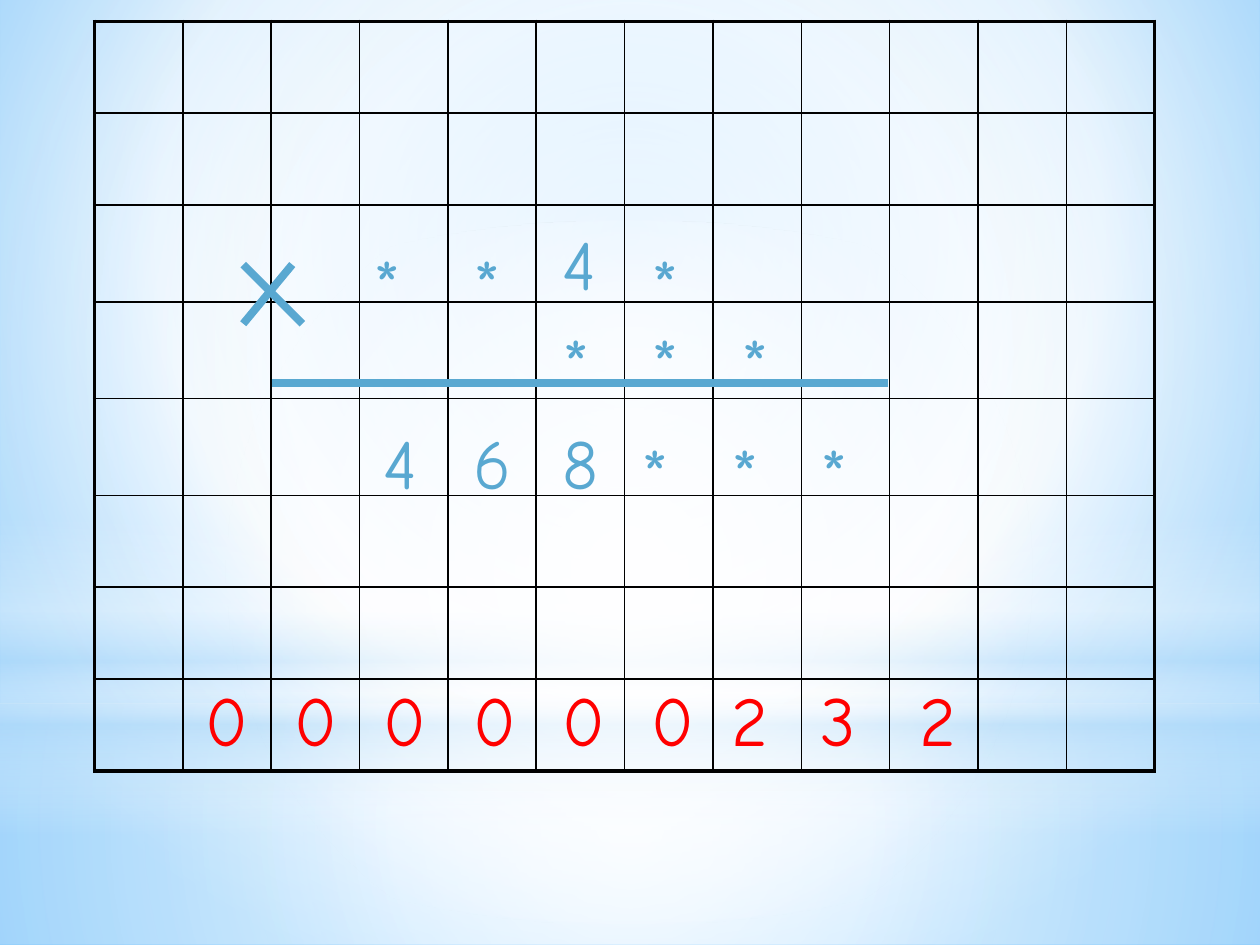
from lxml import etree
from pptx import Presentation
from pptx.dml.color import RGBColor
from pptx.enum import shapes, text
from pptx.oxml import ns, parse_xml
from pptx.util import Pt

COLOURS = {
    "digit": "59A8D1", "answer": "FF0000", "grid": "000000",
    "white": "FFFFFF", "haze": "B4DCFA", "sky": "9ED5FF", "edge": "5BB9FF",
}
SLIDE_W, SLIDE_H = 720, 540
STEP = 5.67          # horizontal unit of the digits; one column is nine steps
DIGIT_LEFT = 110.2
DIGIT_H = 55.4
GRID_LEFT, GRID_TOP = 54, 12.2
COLUMN_W, COLUMN_COUNT = 50.5, 12
ROW_HEIGHTS = [52.5] * 2 + [55.3] * 3 + [52.5] * 3
CENTRE = (50, 50, 50, 50)

# Backdrop layers: preset, top, height, stops (position, colour, opacity), focus
LAYERS = [
    ("RECTANGLE", 401.8, 138.2,
     [(0, "white", 91), (37, "white", 76), (100, "haze", 79)], CENTRE),
    ("RECTANGLE", 0, 401.8,
     [(0, "white", 89), (48, "white", 62), (100, "haze", 79)], CENTRE),
    ("RECTANGLE", 296.6, 180,
     [(0, "white", 0), (29, "white", 30), (45, "haze", 40),
      (55, "white", 26), (65, "haze", 60), (100, "white", 0)], None),
    ("OVAL", 126, 401.8, [(0, "white", 100), (56, "white", 0)], CENTRE),
]

# Lines of the sum: top, colour, then (symbol, offset and width in steps)
SUM_LINES = [
    (133.9, "digit", [("*", 17, 8), ("*", 27, 6), ("*", 45, 7)]),
    (122.4, "digit", [("4", 36, 5)]),
    (179.3, "digit", [("*", 36, 6), ("*", 45, 6), ("*", 54, 6)]),
    (241.9, "digit", [("*", 44, 7), ("*", 53, 6), ("*", 62, 6)]),
    (236.2, "digit", [("4", 18, 5), ("6", 27, 6), ("8", 36, 7)]),
    (383, "answer", [("0", 0, 6), ("0", 9, 7), ("0", 18, 6), ("0", 27, 7),
                     ("0", 36, 6), ("0", 45, 6), ("2", 53, 7), ("3", 62, 7),
                     ("2", 72, 5)]),
]

# Multiplication sign and rule: start and end points
STROKES = [
    (167, 151.2, 139, 185),
    (139, 151.2, 172.8, 185),
    (155.5, 218.9, 507.6, 218.9),
]


def rgb(name):
    return RGBColor.from_string(COLOURS[name])


def set_gradient(properties, stops, focus=None):
    """Replace an empty fill by a circular gradient, or a vertical one."""
    stop_xml = "".join(
        f'<a:gs pos="{position * 1000}"><a:srgbClr val="{COLOURS[name]}">'
        f'<a:alpha val="{opacity * 1000}"/></a:srgbClr></a:gs>'
        for position, name, opacity in stops)
    direction = '<a:lin ang="5400000" scaled="0"/>'
    if focus:
        sides = " ".join(f'{side}="{share * 1000}"'
                         for side, share in zip("ltrb", focus))
        direction = f'<a:path path="circle"><a:fillToRect {sides}/></a:path>'
    gradient = parse_xml(f'<a:gradFill {ns.nsdecls("a")} rotWithShape="1">'
                         f'<a:gsLst>{stop_xml}</a:gsLst>{direction}</a:gradFill>')
    properties.replace(properties.find(ns.qn("a:noFill")), gradient)


def add_layer(slide, preset, top, height, stops, focus):
    layer = slide.shapes.add_shape(getattr(shapes.MSO_SHAPE, preset),
                                   0, Pt(top), Pt(SLIDE_W), Pt(height))
    layer.shadow.inherit = False
    layer.line.fill.background()
    layer.fill.background()
    set_gradient(layer.fill._xPr, stops, focus)


def set_borders(cell, widths):
    """Draw the left, right, top and bottom border of a cell."""
    properties = cell._tc.get_or_add_tcPr()
    for index, (side, width) in enumerate(zip("LRTB", widths)):
        properties.insert(index, parse_xml(
            f'<a:ln{side} {ns.nsdecls("a")} w="{Pt(width)}"><a:solidFill>'
            f'<a:srgbClr val="{COLOURS["grid"]}"/></a:solidFill></a:ln{side}>'))


def add_grid(slide):
    row_count = len(ROW_HEIGHTS)
    grid = slide.shapes.add_table(
        row_count, COLUMN_COUNT, Pt(GRID_LEFT), Pt(GRID_TOP),
        Pt(COLUMN_W * COLUMN_COUNT), Pt(sum(ROW_HEIGHTS))).table
    grid.first_row = grid.horz_banding = False
    for column in grid.columns:
        column.width = Pt(COLUMN_W)
    for r, height in enumerate(ROW_HEIGHTS):
        grid.rows[r].height = Pt(height)
        for c in range(COLUMN_COUNT):
            cell = grid.cell(r, c)
            cell.fill.background()
            outer = (c == 0, c == COLUMN_COUNT - 1, r == 0, r == row_count - 1)
            set_borders(cell, [2.25 if edge else 1 for edge in outer])


def add_stroke(slide, *ends):
    stroke = slide.shapes.add_connector(shapes.MSO_CONNECTOR.STRAIGHT,
                                        *[Pt(end) for end in ends])
    stroke.line.color.rgb = rgb("digit")
    stroke.line.width = Pt(4.5)
    etree.SubElement(stroke._element.spPr, ns.qn("a:effectLst"))


def add_symbol(slide, symbol, left, top, width, colour):
    frame = slide.shapes.add_textbox(Pt(left), Pt(top), Pt(width),
                                     Pt(DIGIT_H)).text_frame
    frame.word_wrap = True
    frame.auto_size = text.MSO_AUTO_SIZE.SHAPE_TO_FIT_TEXT
    paragraph = frame.paragraphs[0]
    paragraph._p.get_or_add_pPr().append(parse_xml(
        f'<a:spcBef {ns.nsdecls("a")}><a:spcPct val="50000"/></a:spcBef>'))
    run = paragraph.add_run()
    run.text = symbol
    for attribute, value in {"name": "Comic Neue", "size": Pt(40)}.items():
        setattr(run.font, attribute, value)
    run.font.color.rgb = rgb(colour)


def main():
    deck = Presentation()
    deck.slide_width, deck.slide_height = Pt(SLIDE_W), Pt(SLIDE_H)
    slide = deck.slides.add_slide(deck.slide_layouts[6])

    # Backdrop
    slide.background.fill.background()
    set_gradient(slide.background.fill._xPr,
                 [(0, "sky", 100), (60, "white", 100), (100, "edge", 100)],
                 (20, 10, 20, 60))
    for layer in LAYERS:
        add_layer(slide, *layer)

    # Squared paper
    add_grid(slide)

    # Written multiplication
    for stroke in STROKES:
        add_stroke(slide, *stroke)
    for top, colour, symbols in SUM_LINES:
        for symbol, offset, width in symbols:
            add_symbol(slide, symbol, DIGIT_LEFT + STEP * offset, top,
                       STEP * width, colour)

    deck.save("out.pptx")


if __name__ == "__main__":
    main()
